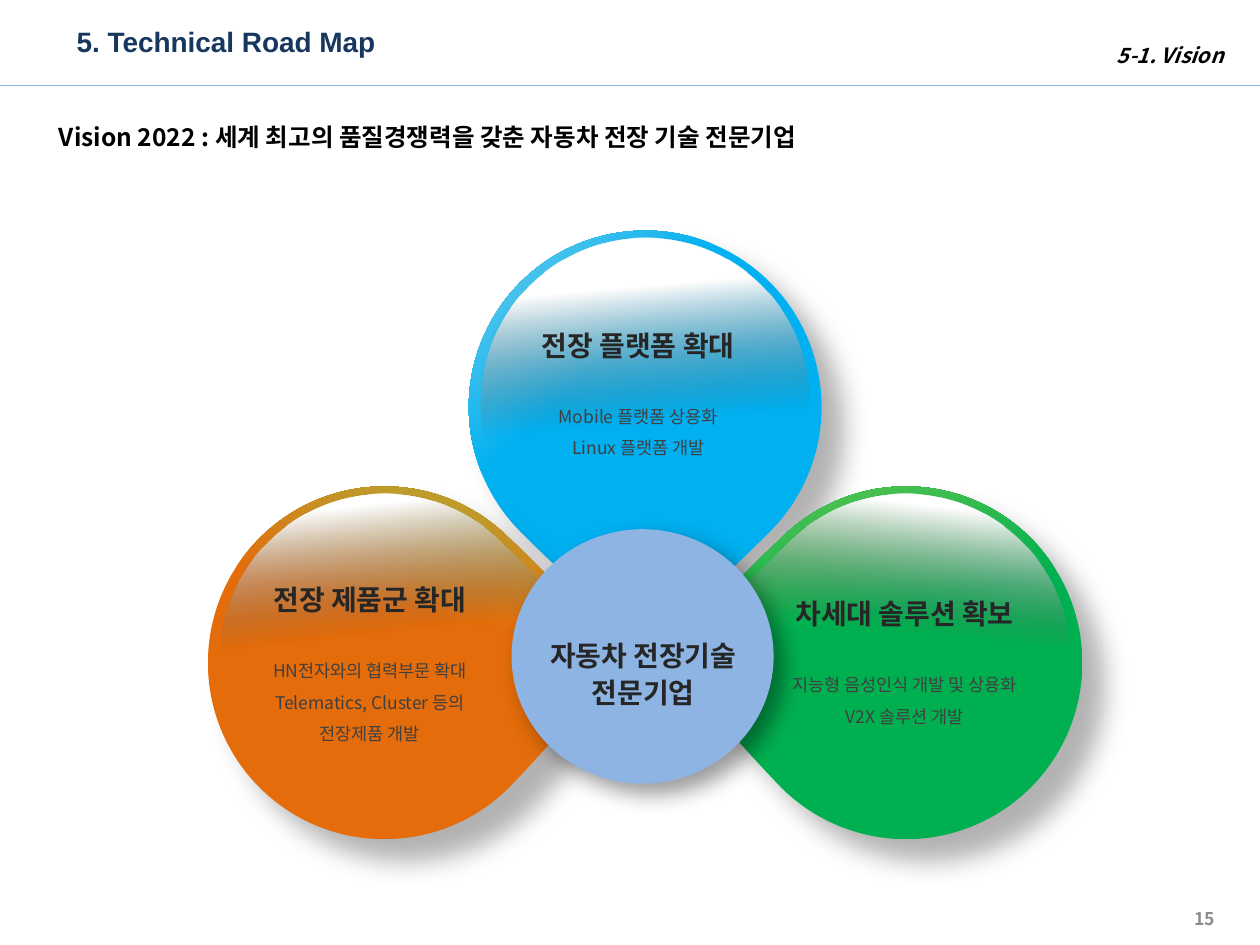
from pptx import Presentation
from pptx.dml.color import RGBColor
from pptx.enum.shapes import MSO_CONNECTOR, MSO_SHAPE
from pptx.enum.text import MSO_ANCHOR, PP_ALIGN
from pptx.oxml.ns import qn
from pptx.util import Inches, Pt
from lxml import etree

LEFT, MID, RIGHT = PP_ALIGN.LEFT, PP_ALIGN.CENTER, PP_ALIGN.RIGHT
TOP, CENTER = MSO_ANCHOR.TOP, MSO_ANCHOR.MIDDLE
TEAR, OVAL = MSO_SHAPE.TEAR, MSO_SHAPE.OVAL
STRAIGHT = MSO_CONNECTOR.STRAIGHT
SANS, ARIAL = "Noto Sans CJK KR", "Arial"
COLORS = {
    "white": "FFFFFF", "black": "000000", "navy": "17375E",
    "head": "262626", "body": "404040", "page": "8C8C8C",
    "clear": "595959", "soft": "8EB4E3", "blue": "00B0F0",
    "pale": "B7DEE8", "green": "00B050", "lime": "92D050",
    "orange": "E46C0A",
}


def rgb(name):
    return RGBColor.from_string(COLORS[name])


def style(para, size, color, bold=False, italic=False, font=SANS):
    for run in para.runs:
        face = run.font
        face.size, face.bold, face.italic = Pt(size), bold, italic
        face.name = font
        face.color.rgb = rgb(color)
        east = etree.SubElement(run._r.get_or_add_rPr(), qn("a:ea"))
        east.set("typeface", font)


def add_text(slide, box, lines, align=LEFT, anchor=TOP):
    frame = slide.shapes.add_textbox(*map(Inches, box)).text_frame
    frame.word_wrap = True
    frame.vertical_anchor = anchor
    frame.text = "\n".join(lines)
    for para in frame.paragraphs:
        para.alignment = align
    return frame


def add_label(slide, box, text, size, color, align=LEFT, anchor=TOP, italic=False, font=SANS):
    frame = add_text(slide, box, [text], align, anchor)
    style(frame.paragraphs[0], size, color, True, italic, font)
    return frame


def add_form(slide, kind, box, turn=0, flip=False):
    form = slide.shapes.add_shape(kind, *map(Inches, box))
    form.shadow.inherit = False
    form.line.fill.background()
    form.rotation = turn
    if kind == TEAR:
        form.adjustments[0] = 0.956
    if flip:
        form._element.spPr.find(qn("a:xfrm")).set("flipH", "1")
    return form


def cast(form, alpha, blur, dist):
    effects = form._element.spPr.find(qn("a:effectLst"))
    shade = etree.SubElement(
        effects, qn("a:outerShdw"), blurRad=str(Pt(blur)), dist=str(Pt(dist)),
        dir="2700000", algn="tl", rotWithShape="0")
    tone = etree.SubElement(shade, qn("a:srgbClr"), val=COLORS["black"])
    etree.SubElement(tone, qn("a:alpha"), val=str(alpha * 1000))


def blend(form, stops, angle):
    form.fill.gradient()
    form.fill.gradient_angle = 360 - angle
    for stop, (place, color) in zip(form.fill.gradient_stops, stops):
        stop.position = place
        stop.color.rgb = rgb(color)


def add_petal(slide, box, tones, angle, shine, turn, flip, note, lines):
    left, top, width, height = box
    base = add_form(slide, TEAR, box, turn, flip)
    blend(base, [(0.59, tones[0]), (1, tones[1])], angle)
    cast(base, 30, 15, 18)

    start, end, slope = shine
    gloss = add_form(slide, TEAR, (left + 0.09, top + 0.06, 2.62, 2.61), turn, flip)
    blend(gloss, [(start, "white"), (end, "clear")], slope)
    tone = gloss._element.spPr.findall(".//" + qn("a:srgbClr"))[-1]
    etree.SubElement(tone, qn("a:alpha"), val="0")

    across, down, wide, high = note
    frame = add_text(slide, (left + across, top + down, wide, high), lines, MID)
    head, *rest = frame.paragraphs
    head.line_spacing = 1.1
    style(head, 16, "head", True)
    rest[0].space_before = Pt(19)
    for para in rest:
        para.line_spacing = 1.5
        style(para, 10, "body")


def add_core(slide, box):
    left, top, width, height = box
    disc = add_form(slide, OVAL, box)
    disc.fill.solid()
    disc.fill.fore_color.rgb = rgb("soft")
    cast(disc, 40, 13, 8)
    note = (left + 0.08, top + 0.79, 1.93, 0.69)
    for para in add_text(slide, note, ["자동차 전장기술", "전문기업"], MID).paragraphs:
        para.line_spacing = 1.1
        style(para, 16, "head", True)


def add_head(slide, box):
    left, top, width, height = box
    rule = slide.shapes.add_connector(
        STRAIGHT, *map(Inches, (left, top + height, left + width, top + height)))
    rule.line.color.rgb = rgb("soft")
    rule.line.width = Pt(0.5)
    etree.SubElement(rule._element.spPr, qn("a:effectLst"))
    add_label(slide, (left + 0.51, top, 9.26, 0.66), "5. Technical Road Map",
              16, "navy", anchor=CENTER, font=ARIAL)
    add_label(slide, (left + 4.69, top + 0.29, 5.12, 0.3), "5-1. Vision",
              12, "black", RIGHT, italic=True)


def add_map(slide, box):
    left, top, width, height = box
    side, low = 2.8, top + 2.03
    shine = (0.2, 0.45, 230)
    add_petal(slide, (left + 2.07, top, side, side), ("blue", "pale"), 90,
              (0.27, 0.54, 310), 135, False, (-0.33, 0.7, 3.35, 1.16),
              ["전장 플랫폼 확대", "Mobile 플랫폼 상용화", "Linux 플랫폼 개발"])
    add_petal(slide, (left + width - side, low, side, side), ("green", "lime"), 30,
              shine, 226.4, False, (-0.06, 0.8, 2.9, 1.12),
              ["차세대 솔루션 확보", "지능형 음성인식 개발 및 상용화", "V2X 솔루션 개발"])
    add_petal(slide, (left, low, side, side), ("orange", "lime"), 30,
              shine, 133.6, True, (-0.39, 0.69, 3.35, 1.38),
              ["전장 제품군 확대", "HN전자와의 협력부문 확대",
               "Telematics, Cluster 등의", "전장제품 개발"])
    add_core(slide, (left + 2.41, top + 2.37, 2.08, 2.02))


def main():
    deck = Presentation()
    deck.slide_width, deck.slide_height = Inches(10), Inches(7.5)
    slide = deck.slides.add_slide(deck.slide_layouts[6])
    add_head(slide, (0, 0, 10, 0.68))
    add_label(slide, (0.37, 0.92, 9.26, 1.02),
              "Vision 2022 : 세계 최고의 품질경쟁력을 갖춘 자동차 전장 기술 전문기업",
              14, "black")
    add_map(slide, (1.65, 1.83, 6.94, 4.83))
    page = add_label(slide, (9.32, 7.21, 0.48, 0.16), "15", 10, "page", MID, CENTER)
    page.margin_top = page.margin_bottom = 0
    deck.save("out.pptx")


if __name__ == "__main__":
    main()
